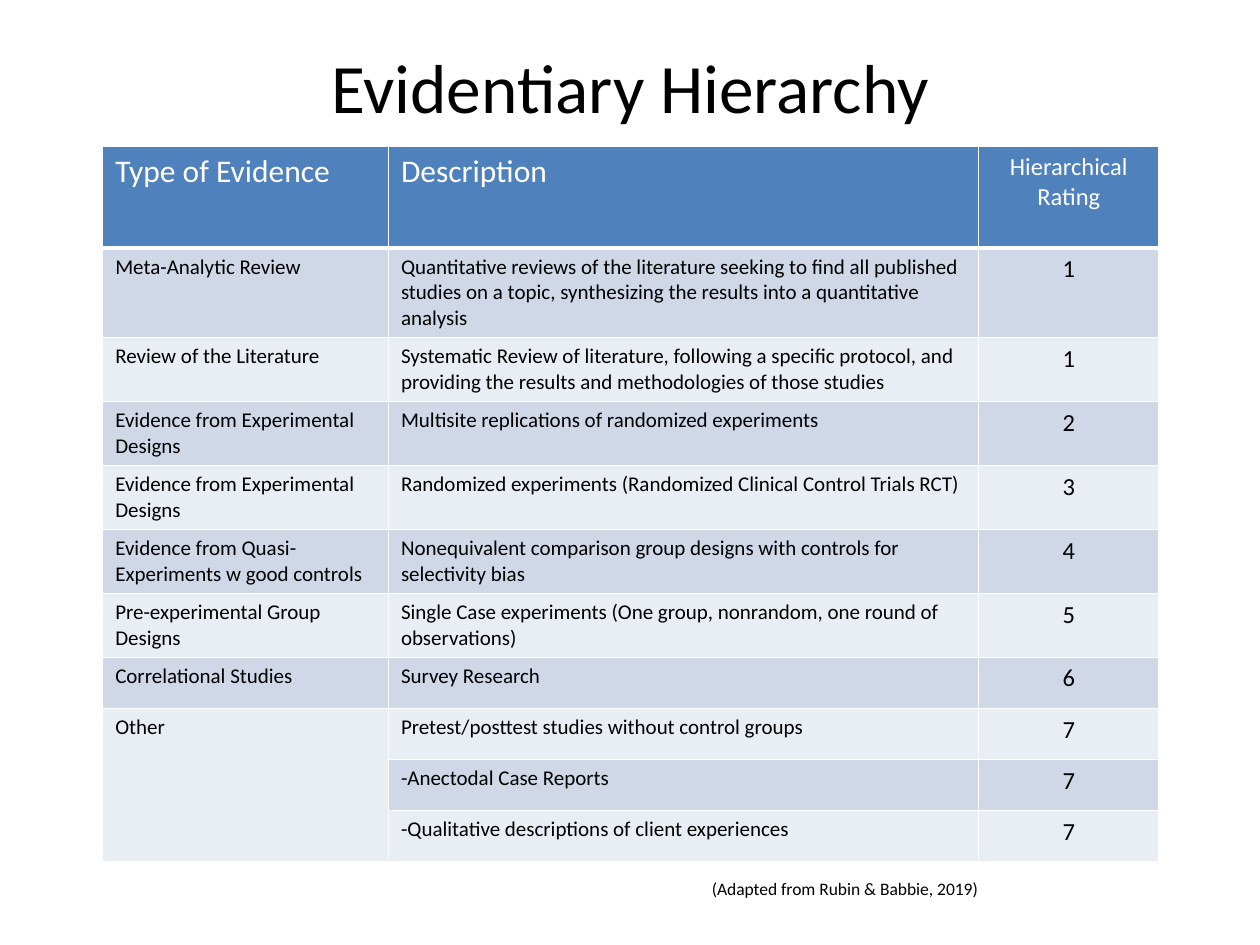
from lxml.etree import SubElement
from pptx import Presentation
from pptx.dml.color import RGBColor
from pptx.enum.text import MSO_ANCHOR, MSO_AUTO_SIZE, PP_ALIGN
from pptx.oxml.ns import qn
from pptx.util import Cm, Pt

BLACK = RGBColor(0x00, 0x00, 0x00)
WHITE = RGBColor(0xFF, 0xFF, 0xFF)
BLUE = RGBColor(0x4F, 0x81, 0xBD)
DARK = RGBColor(0xD0, 0xD8, 0xE8)
LIGHT = RGBColor(0xE9, 0xED, 0xF4)
FONT = "Calibri"

COLS = [5.76, 11.9, 3.63]
HEAD = ["Type of Evidence", "Description", "Hierarchical Rating"]
ROWS = [
    (1.79, "Meta-Analytic Review",
     "Quantitative reviews of the literature seeking to find all published "
     "studies on a topic, synthesizing the results into a quantitative analysis", "1"),
    (1.29, "Review of the Literature",
     "Systematic Review of literature, following a specific protocol, and "
     "providing the results and methodologies of those studies", "1"),
    (1.29, "Evidence from Experimental Designs",
     "Multisite replications of randomized experiments", "2"),
    (1.29, "Evidence from Experimental Designs",
     "Randomized experiments (Randomized Clinical Control Trials RCT)", "3"),
    (1.29, "Evidence from Quasi-Experiments w good controls",
     "Nonequivalent comparison group designs with controls for selectivity bias", "4"),
    (1.29, "Pre-experimental Group Designs",
     "Single Case experiments (One group, nonrandom, one round of observations)", "5"),
    (1.03, "Correlational Studies", "Survey Research", "6"),
    (1.03, "Other", "Pretest/posttest studies without control groups", "7"),
    (1.03, None, "-Anectodal Case Reports", "7"),
    (1.03, None, "-Qualitative descriptions of client experiences", "7"),
]


def add_text(frame, text, size, color=BLACK, align=PP_ALIGN.LEFT):
    para = frame.paragraphs[0]
    para.alignment = align
    run = para.add_run()
    run.text = text
    font = run.font
    font.name, font.size, font.bold = FONT, Pt(size), False
    font.color.rgb = color


def add_edges(cell, base):
    props = cell._tc.get_or_add_tcPr()
    for side, width in (("L", 1), ("R", 1), ("T", 1), ("B", base)):
        line = SubElement(props, qn(f"a:ln{side}"), w=str(Pt(width)))
        fill = SubElement(line, qn("a:solidFill"))
        SubElement(fill, qn("a:srgbClr"), val=str(WHITE))


def fill_cell(cell, text, size, fill, color=BLACK, align=PP_ALIGN.LEFT, base=1):
    add_edges(cell, base)
    cell.fill.solid()
    cell.fill.fore_color.rgb = fill
    add_text(cell.text_frame, text, size, color, align)


def add_title(slide):
    title = slide.shapes.title
    title.left, title.top, title.width, title.height = Cm(1.27), Cm(0.97), Cm(22.86), Cm(1.52)
    title.text_frame.vertical_anchor = MSO_ANCHOR.MIDDLE
    add_text(title.text_frame, "Evidentiary Hierarchy", 39.6, align=PP_ALIGN.CENTER)


def add_grid(slide):
    highs = [2.05] + [row[0] for row in ROWS]
    table = slide.shapes.add_table(len(highs), len(COLS), Cm(2.07), Cm(2.95),
                                   Cm(sum(COLS)), Cm(sum(highs))).table
    for col, width in zip(table.columns, COLS):
        col.width = Cm(width)
    for row, high in zip(table.rows, highs):
        row.height = Cm(high)
    aligns = [PP_ALIGN.LEFT, PP_ALIGN.LEFT, PP_ALIGN.CENTER]
    for c, text in enumerate(HEAD):
        fill_cell(table.cell(0, c), text, (18, 18, 14)[c], BLUE, WHITE, aligns[c], 3)
    for r, (_, *texts) in enumerate(ROWS, 1):
        for c, text in enumerate(texts):
            if text:
                fill_cell(table.cell(r, c), text, (12, 12, 14)[c],
                          DARK if r % 2 else LIGHT, align=aligns[c])
    table.cell(8, 0).merge(table.cell(10, 0))


def add_credit(slide):
    frame = slide.shapes.add_textbox(Cm(14.1), Cm(17.58), Cm(5.97), Cm(0.68)).text_frame
    frame.word_wrap = False
    frame.auto_size = MSO_AUTO_SIZE.SHAPE_TO_FIT_TEXT
    add_text(frame, "(Adapted from Rubin & Babbie, 2019)", 10)


def main():
    deck = Presentation()
    deck.slide_width, deck.slide_height = Cm(25.4), Cm(19.05)
    slide = deck.slides.add_slide(deck.slide_layouts[5])
    add_title(slide)
    add_grid(slide)
    add_credit(slide)
    deck.save("out.pptx")


if __name__ == "__main__":
    main()
